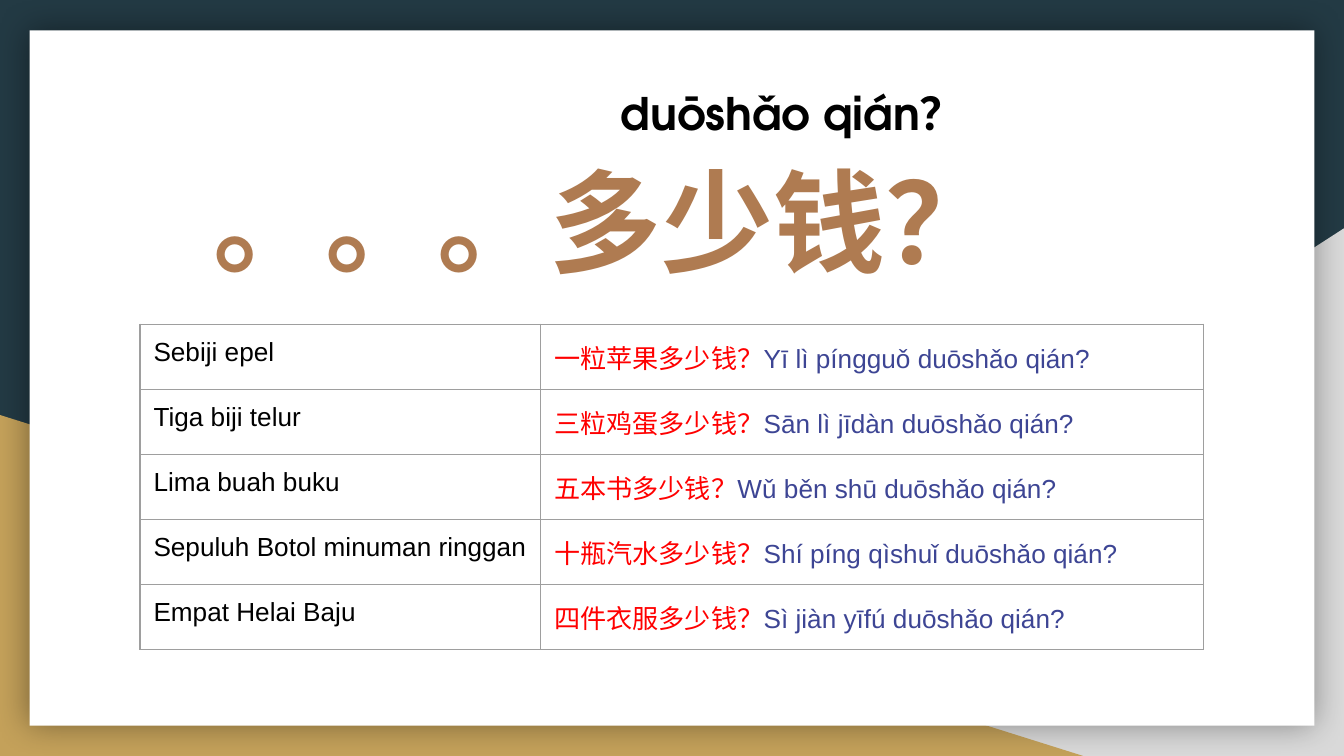
from typing import NamedTuple

from lxml.etree import SubElement
from pptx import Presentation
from pptx.dml.color import RGBColor
from pptx.enum.shapes import MSO_SHAPE as Preset
from pptx.enum.text import MSO_ANCHOR as Anchor
from pptx.oxml.ns import qn
from pptx.util import Emu, Inches, Pt

WIDTH = Inches(10)
HEIGHT = Emu(WIDTH * 9 // 16)
MARGIN = Inches(0.1)
BODY_FONT, TITLE_FONT = "Arial", "TeX Gyre Adventor"
BLACK, RED, BLUE, BROWN, GRAY = "000000", "FF0000", "3D4594", "AF7B51", "9E9E9E"


class Area(NamedTuple):
    """A rectangle given in hundredths of the slide's width and height."""
    left: float
    top: float
    width: float
    height: float

    def lengths(self) -> tuple[Emu, ...]:
        """Return left, top, width and height as slide lengths."""
        sides = (WIDTH, HEIGHT, WIDTH, HEIGHT)
        return tuple(Emu(int(side * share / 100)) for side, share in zip(sides, self))


class Panel(NamedTuple):
    """A filled background shape."""
    preset: Preset
    area: Area
    fill: str
    flipped: bool = False
    shaded: bool = False


class Phrase(NamedTuple):
    """A Malay phrase with its Chinese question and pinyin."""
    malay: str
    chinese: str
    pinyin: str


class TitleLine(NamedTuple):
    """A title line with its size and pitch in points and indent in inches."""
    text: str
    size: int
    pitch: int
    indent: float
    color: str


PANELS = (
    Panel(Preset.RIGHT_TRIANGLE, Area(39.2, 30.2, 60.8, 69.8), "D9D9D9", flipped=True),
    Panel(Preset.RIGHT_TRIANGLE, Area(0, 54.9, 80.6, 45.1), "C4A15A"),
    Panel(Preset.RECTANGLE, Area(2.2, 4, 95.6, 92), "FFFFFF", shaded=True),
)
TABLE_AREA = Area(10.42, 42.9, 79.15, 38.6)
COLUMN_SHARES = (29.8, 49.35)
PHRASES = (
    Phrase("Sebiji epel", "一粒苹果多少钱？", "Yī lì píngguǒ duōshǎo qián?"),
    Phrase("Tiga biji telur", "三粒鸡蛋多少钱？", "Sān lì jīdàn duōshǎo qián?"),
    Phrase("Lima buah buku", "五本书多少钱？", "Wǔ běn shū duōshǎo qián?"),
    Phrase("Sepuluh Botol minuman ringgan", "十瓶汽水多少钱？", "Shí píng qìshuǐ duōshǎo qián?"),
    Phrase("Empat Helai Baju", "四件衣服多少钱？", "Sì jiàn yīfú duōshǎo qián?"),
)
TITLE_AREA = Area(14.9, 7.8, 86, 24.7)
TITLE_LINES = (
    TitleLine("duōshǎo qián？", 24, 36, 3.03, BLACK),
    TitleLine("。。。多少钱？", 60, 79, 0, BROWN),
)


def color(value: str) -> RGBColor:
    """Turn a hex string into a colour."""
    return RGBColor.from_string(value)


def set_margins(holder) -> None:
    """Give a cell or text frame equal margins on all sides."""
    holder.margin_left = holder.margin_right = MARGIN
    holder.margin_top = holder.margin_bottom = MARGIN


def draw_panel(page, panel: Panel) -> None:
    """Draw one background shape."""
    shape = page.shapes.add_shape(panel.preset, *panel.area.lengths())
    shape.shadow.inherit = False
    shape.fill.solid()
    shape.fill.fore_color.rgb = color(panel.fill)
    shape.line.fill.background()
    properties = shape.element.spPr
    if panel.flipped:
        properties.find(qn("a:xfrm")).set("flipH", "1")
    if panel.shaded:
        effects = properties.find(qn("a:effectLst"))
        shadow = SubElement(effects, qn("a:outerShdw"), blurRad=str(Pt(18)), algn="ctr", rotWithShape="0")
        black = SubElement(shadow, qn("a:srgbClr"), val=BLACK)
        SubElement(black, qn("a:alpha"), val="40000")


def draw_borders(cell) -> None:
    """Put a thin gray line on each side of a cell."""
    properties = cell._tc.get_or_add_tcPr()
    for place, side in enumerate(("a:lnL", "a:lnR", "a:lnT", "a:lnB")):
        line = SubElement(properties, qn(side), w=str(Pt(0.75)))
        fill = SubElement(line, qn("a:solidFill"))
        SubElement(fill, qn("a:srgbClr"), val=GRAY)
        properties.insert(place, line)


def fill_cell(cell, spans: tuple[tuple[str, str], ...]) -> None:
    """Write coloured spans into a bordered cell."""
    cell.fill.background()
    set_margins(cell)
    draw_borders(cell)
    para = cell.text_frame.paragraphs[0]
    para.font.name, para.font.size = BODY_FONT, Pt(14)
    for text, tint in spans:
        span = para.add_run()
        span.text = text
        span.font.color.rgb = color(tint)


def draw_table(page) -> None:
    """Draw the table of phrases."""
    frame = page.shapes.add_table(len(PHRASES), len(COLUMN_SHARES), *TABLE_AREA.lengths())
    table = frame.table
    table.first_row = table.horz_banding = False
    for column, share in zip(table.columns, COLUMN_SHARES):
        column.width = Emu(int(WIDTH * share / 100))
    for row, phrase in zip(table.rows, PHRASES):
        fill_cell(row.cells[0], ((phrase.malay, BLACK),))
        fill_cell(row.cells[1], ((phrase.chinese, RED), (phrase.pinyin, BLUE)))


def draw_title(page) -> None:
    """Draw the pinyin line above the large question."""
    frame = page.shapes.add_textbox(*TITLE_AREA.lengths()).text_frame
    frame.word_wrap = True
    frame.vertical_anchor = Anchor.TOP
    set_margins(frame)
    for place, line in enumerate(TITLE_LINES):
        para = frame.add_paragraph() if place else frame.paragraphs[0]
        para.text = line.text
        para.line_spacing = Pt(line.pitch)
        para._p.get_or_add_pPr().set("indent", str(Inches(line.indent)))
        para.font.name, para.font.size, para.font.bold = TITLE_FONT, Pt(line.size), True
        para.font.color.rgb = color(line.color)


def main() -> None:
    """Build and save the slide."""
    deck = Presentation()
    deck.slide_width, deck.slide_height = WIDTH, HEIGHT
    page = deck.slides.add_slide(deck.slide_layouts[6])
    page.background.fill.solid()
    page.background.fill.fore_color.rgb = color("233A44")
    for panel in PANELS:
        draw_panel(page, panel)
    draw_table(page)
    draw_title(page)
    deck.save("out.pptx")


if __name__ == "__main__":
    main()
